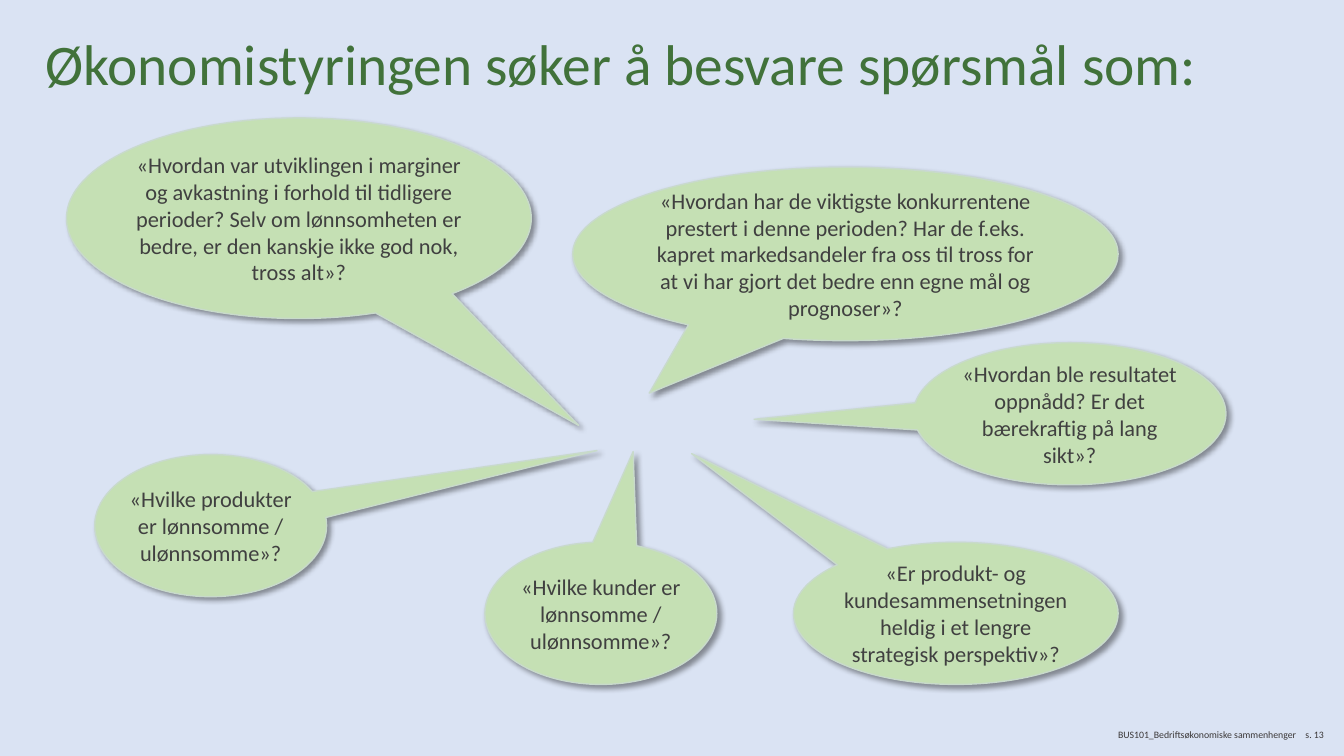
import pptx
import pptx.util
import pptx.dml.color
import pptx.enum.shapes
import pptx.enum.text
import pptx.oxml
import pptx.oxml.ns

Inches = pptx.util.Inches
Align = pptx.enum.text.PP_ALIGN

COLORS = {
    "background": "DAE3F3",
    "title": "41723A",
    "footer": "3B3838",
    "bubble": "C5E0B4",
    "outline": "C8DACB",
    "question": "404040",
    "shadow": "000000",
}
FONT = "Calibri"
TITLE = "Økonomistyringen søker å besvare spørsmål som:"
FOOTERS = [
    ("BUS101_Bedriftsøkonomiske sammenhenger", (11.09, 7.16, 2.14, 0.26), Align.LEFT),
    ("s. 13", (12.87, 7.16, 0.26, 0.25), Align.RIGHT),
]
QUESTIONS = [
    ("«Hvordan har de viktigste konkurrentene prestert i denne perioden? "
     "Har de f.eks. kapret markedsandeler fra oss til tross for at vi har "
     "gjort det bedre enn egne mål og prognoser»?",
     (5.68, 1.66, 5.41, 1.72), (6.44, 3.9)),
    ("«Hvordan var utviklingen i marginer og avkastning i forhold til "
     "tidligere perioder? Selv om lønnsomheten er bedre, er den kanskje "
     "ikke god nok, tross alt»?",
     (0.66, 1.17, 4.61, 1.99), (5.74, 4.22)),
    ("«Hvilke produkter er lønnsomme / ulønnsomme»?",
     (0.94, 4.51, 2.3, 1.41), (5.92, 4.47)),
    ("«Hvilke kunder er lønnsomme / ulønnsomme»?",
     (4.81, 5.38, 2.3, 1.41), (6.28, 4.48)),
    ("«Er produkt- og kundesammensetningen heldig i et lengre strategisk perspektiv»?",
     (7.87, 5.38, 3.22, 1.41), (6.86, 4.5)),
    ("«Hvordan ble resultatet oppnådd? Er det bærekraftig på lang sikt»?",
     (9.06, 3.4, 3.1, 1.41), (7.48, 4.16)),
]
SHADOW_XML = (
    f'<a:effectLst {pptx.oxml.ns.nsdecls("a")}>'
    '<a:outerShdw blurRad="50800" dist="38100" dir="2700000" algn="tl" rotWithShape="0">'
    f'<a:srgbClr val="{COLORS["shadow"]}"><a:alpha val="40000"/></a:srgbClr>'
    '</a:outerShdw></a:effectLst>'
)


def rgb(name):
    return pptx.dml.color.RGBColor.from_string(COLORS[name])


def write(shape, text, size, color, alignment, insets=(0, 0)):
    frame = shape.text_frame
    frame.text = text
    frame.word_wrap = True
    frame.vertical_anchor = pptx.enum.text.MSO_ANCHOR.MIDDLE
    frame.margin_left = frame.margin_right = Inches(insets[0])
    frame.margin_top = frame.margin_bottom = Inches(insets[1])
    paragraph = frame.paragraphs[0]
    paragraph.alignment = alignment
    font = paragraph.runs[0].font
    font.name = FONT
    font.size = pptx.util.Pt(size)
    font.color.rgb = rgb(color)
    return paragraph


def add_bubble(slide, text, box, tip):
    left, top, width, height = box
    shape = slide.shapes.add_shape(
        pptx.enum.shapes.MSO_SHAPE.OVAL_CALLOUT, *map(Inches, box))
    shape.adjustments[0] = (tip[0] - left) / width - 0.5
    shape.adjustments[1] = (tip[1] - top) / height - 0.5
    shape.fill.solid()
    shape.fill.fore_color.rgb = rgb("bubble")
    shape.line.color.rgb = rgb("outline")
    shape.line.width = pptx.util.Pt(1)
    shape.shadow.inherit = False
    effects = shape.element.spPr.find(pptx.oxml.ns.qn("a:effectLst"))
    shape.element.spPr.replace(effects, pptx.oxml.parse_xml(SHADOW_XML))
    write(shape, text, 16, "question", Align.CENTER)


def main():
    """Build the slide of questions that financial control answers."""
    presentation = pptx.Presentation()
    presentation.slide_width = Inches(13.33)
    presentation.slide_height = Inches(7.5)
    slide = presentation.slides.add_slide(presentation.slide_layouts[6])
    slide.background.fill.solid()
    slide.background.fill.fore_color.rgb = rgb("background")

    for text, box, alignment in FOOTERS:
        footer = slide.shapes.add_textbox(*map(Inches, box))
        write(footer, text, 7, "footer", alignment)

    title = slide.shapes.add_textbox(*map(Inches, (0.35, 0.3, 11.81, 0.72)))
    paragraph = write(title, TITLE, 41, "title", Align.LEFT, (0.1, 0.05))
    paragraph.line_spacing = 0.9

    for text, box, tip in QUESTIONS:
        add_bubble(slide, text, box, tip)

    presentation.save("out.pptx")


if __name__ == "__main__":
    main()
